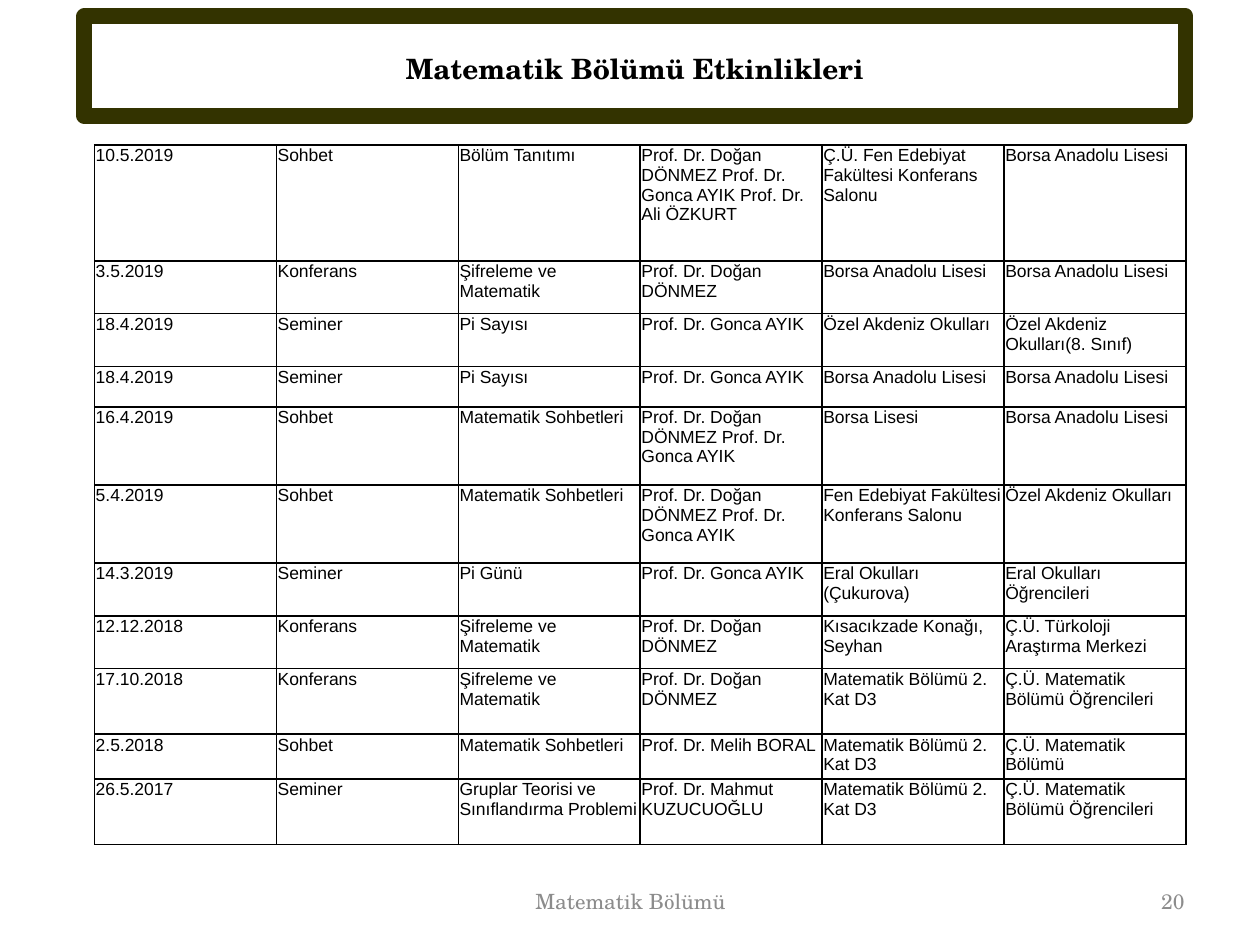
from typing import NamedTuple

from lxml import etree
from pptx import Presentation
from pptx.dml.color import RGBColor
from pptx.enum.shapes import MSO_SHAPE
from pptx.enum.text import MSO_ANCHOR, MSO_AUTO_SIZE, PP_ALIGN
from pptx.oxml.ns import qn
from pptx.util import Inches, Pt

RECTANGLE = MSO_SHAPE.RECTANGLE
MIDDLE, TOP = MSO_ANCHOR.MIDDLE, MSO_ANCHOR.TOP
LEFT, CENTER, RIGHT = PP_ALIGN.LEFT, PP_ALIGN.CENTER, PP_ALIGN.RIGHT
NO_AUTOFIT = MSO_AUTO_SIZE.NONE

BLACK = RGBColor(0x00, 0x00, 0x00)
OLIVE = RGBColor(0x33, 0x33, 0x00)
GRAY = RGBColor(0x8C, 0x8C, 0x8C)
SERIF, SANS = "TeX Gyre Schola", "Arial"
COLUMN_WIDTH = 1.444
CELL_MARGIN = Inches(0.01)


class Event(NamedTuple):
    height: float
    date: str
    kind: str
    topic: str
    speaker: str
    venue: str
    audience: str


class Footer(NamedTuple):
    left: float
    width: float
    text: str
    align: PP_ALIGN


DONMEZ = "Prof. Dr. Doğan DÖNMEZ"
AYIK = "Prof. Dr. Gonca AYIK"
BORSA = "Borsa Anadolu Lisesi"
AKDENIZ = "Özel Akdeniz Okulları"
CIPHERS = "Şifreleme ve Matematik"
TALKS = "Matematik Sohbetleri"
ROOM = "Matematik Bölümü 2. Kat D3"
STUDENTS = "Ç.Ü. Matematik Bölümü Öğrencileri"

EVENTS = [
    Event(0.92, "10.5.2019", "Sohbet", "Bölüm Tanıtımı", f"{DONMEZ} {AYIK} Prof. Dr. Ali ÖZKURT",
          "Ç.Ü. Fen Edebiyat Fakültesi Konferans Salonu", BORSA),
    Event(0.42, "3.5.2019", "Konferans", CIPHERS, DONMEZ, BORSA, BORSA),
    Event(0.42, "18.4.2019", "Seminer", "Pi Sayısı", AYIK, AKDENIZ, f"{AKDENIZ}(8. Sınıf)"),
    Event(0.32, "18.4.2019", "Seminer", "Pi Sayısı", AYIK, BORSA, BORSA),
    Event(0.62, "16.4.2019", "Sohbet", TALKS, f"{DONMEZ} {AYIK}", "Borsa Lisesi", BORSA),
    Event(0.62, "5.4.2019", "Sohbet", TALKS, f"{DONMEZ} {AYIK}",
          "Fen Edebiyat Fakültesi Konferans Salonu", AKDENIZ),
    Event(0.42, "14.3.2019", "Seminer", "Pi Günü", AYIK,
          "Eral Okulları (Çukurova)", "Eral Okulları Öğrencileri"),
    Event(0.42, "12.12.2018", "Konferans", CIPHERS, DONMEZ,
          "Kısacıkzade Konağı, Seyhan", "Ç.Ü. Türkoloji Araştırma Merkezi"),
    Event(0.52, "17.10.2018", "Konferans", CIPHERS, DONMEZ, ROOM, STUDENTS),
    Event(0.32, "2.5.2018", "Sohbet", TALKS, "Prof. Dr. Melih BORAL", ROOM,
          "Ç.Ü. Matematik Bölümü"),
    Event(0.52, "26.5.2017", "Seminer", "Gruplar Teorisi ve Sınıflandırma Problemi",
          "Prof. Dr. Mahmut KUZUCUOĞLU", ROOM, STUDENTS),
]

FOOTERS = [
    Footer(7.17, 2.33, "20", RIGHT),
    Footer(3.42, 3.17, "Matematik Bölümü", CENTER),
]


def write_text(frame, text: str, *, size: float, font: str, color: RGBColor,
               bold: bool = False, align: PP_ALIGN = LEFT) -> None:
    para = frame.paragraphs[0]
    para.alignment = align
    span = para.add_run()
    span.text = text
    span.font.size = Pt(size)
    span.font.name = font
    span.font.bold = bold
    span.font.color.rgb = color


def add_borders(cell, color: RGBColor, width: float) -> None:
    properties = cell._tc.get_or_add_tcPr()
    for position, side in enumerate(("a:lnL", "a:lnR", "a:lnT", "a:lnB")):
        line = etree.Element(qn(side), w=str(Pt(width)))
        fill = etree.SubElement(line, qn("a:solidFill"))
        etree.SubElement(fill, qn("a:srgbClr"), val=str(color))
        properties.insert(position, line)


def add_title(page, text: str) -> None:
    title = page.shapes.title
    title.left, title.top = Inches(0.54), Inches(0.07)
    title.width, title.height = Inches(9), Inches(0.94)
    title.text_frame.vertical_anchor = MIDDLE
    title.text_frame.auto_size = NO_AUTOFIT
    write_text(title.text_frame, text, size=16, font=SERIF, color=BLACK, bold=True, align=CENTER)


def add_title_frame(page) -> None:
    frame = page.shapes.add_shape(RECTANGLE, Inches(0.67), Inches(0.13), Inches(8.74), Inches(0.79))
    frame.shadow.inherit = False
    frame.fill.background()
    frame.line.color.rgb = OLIVE
    frame.line.width = Pt(9)


def add_footer(page, footer: Footer) -> None:
    box = page.shapes.add_textbox(Inches(footer.left), Inches(6.95),
                                  Inches(footer.width), Inches(0.4))
    box.text_frame.word_wrap = True
    box.text_frame.vertical_anchor = MIDDLE
    write_text(box.text_frame, footer.text, size=12, font=SERIF, color=GRAY, align=footer.align)


def add_event_table(page, events: list[Event]) -> None:
    column_count = len(Event._fields) - 1
    height = sum(event.height for event in events)
    table = page.shapes.add_table(len(events), column_count, Inches(0.75), Inches(1.15),
                                  Inches(COLUMN_WIDTH * column_count), Inches(height)).table
    table.first_row = table.horz_banding = False
    for column in table.columns:
        column.width = Inches(COLUMN_WIDTH)
    for row, event in zip(table.rows, events):
        row.height = Inches(event.height)
        for cell, text in zip(row.cells, event[1:]):
            cell.margin_left = cell.margin_right = CELL_MARGIN
            cell.margin_top = cell.margin_bottom = CELL_MARGIN
            cell.vertical_anchor = TOP
            cell.fill.background()
            add_borders(cell, BLACK, 1)
            write_text(cell.text_frame, text, size=10, font=SANS, color=BLACK)


def main() -> None:
    deck = Presentation()
    deck.slide_width, deck.slide_height = Inches(10), Inches(7.5)
    page = deck.slides.add_slide(deck.slide_layouts.get_by_name("Title Only"))

    # Framed heading
    add_title(page, "Matematik Bölümü Etkinlikleri")
    add_title_frame(page)

    # Page number and department name
    for footer in FOOTERS:
        add_footer(page, footer)

    # Events, newest first
    add_event_table(page, EVENTS)

    deck.save("out.pptx")


if __name__ == "__main__":
    main()
